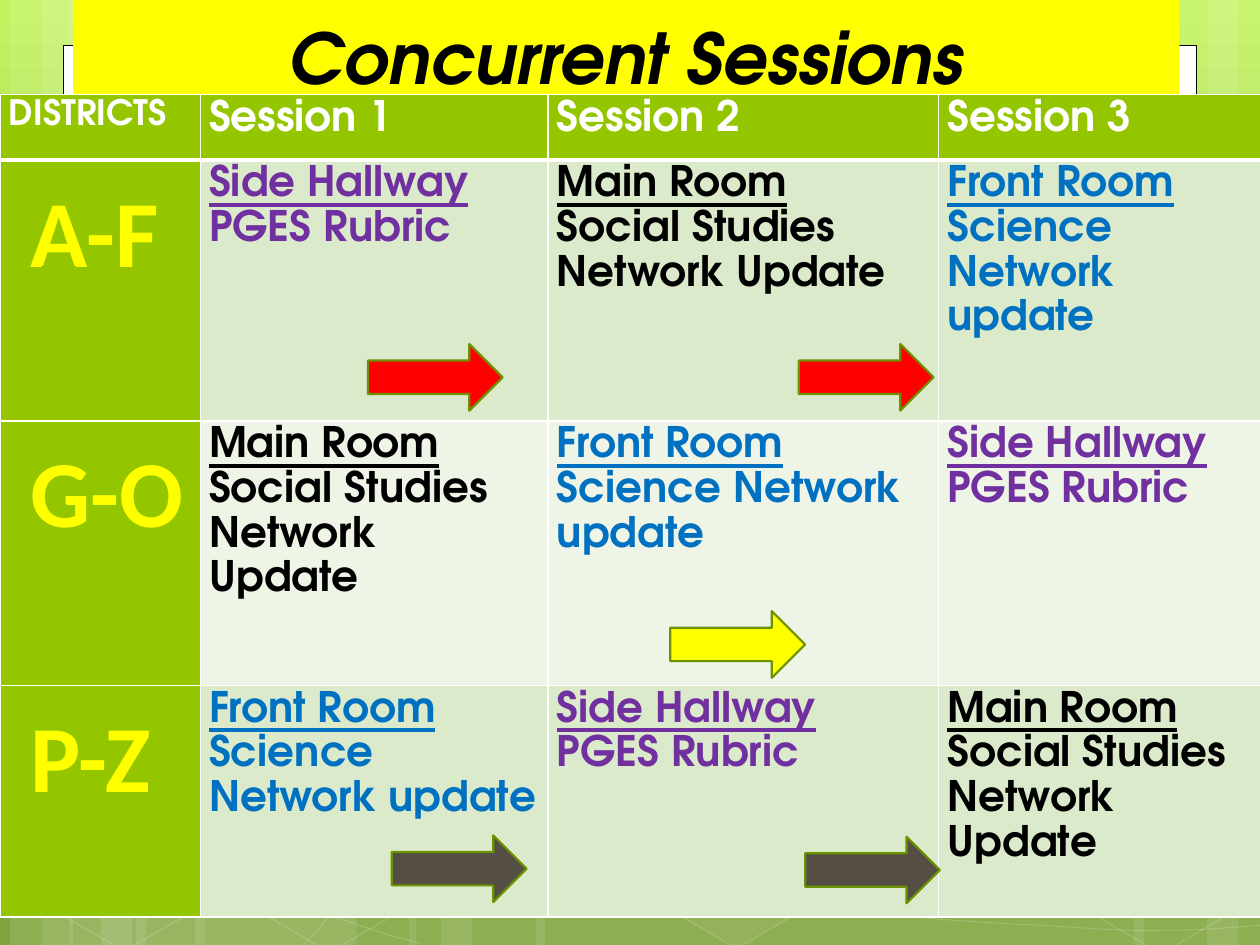
from lxml import etree
from pptx import Presentation
from pptx.dml.color import RGBColor
from pptx.enum.shapes import MSO_SHAPE
from pptx.enum.text import MSO_ANCHOR, PP_ALIGN
from pptx.oxml.ns import qn
from pptx.util import Inches, Pt

RECT, HEX, ARROW = MSO_SHAPE.RECTANGLE, MSO_SHAPE.HEXAGON, MSO_SHAPE.RIGHT_ARROW
BOTTOM, CENTER = MSO_ANCHOR.BOTTOM, PP_ALIGN.CENTER

# The slide is a grid of 100 columns by 75 rows.
COLS, ROWS = 100, 75
UNIT = Inches(0.1)
FONT, SIDE_FONT = "TeX Gyre Adventor", "Calibri"
WHITE, BLACK, GREEN, YELLOW, RED = "FFFFFF", "000000", "94C600", "FFFF00", "FF0000"
BROWN, EDGE, PALE, MIST = "554E44", "6D9200", "DCEACC", "EEF5E7"

# Left edge and width of each full-height stripe
STRIPES = [(10.8, 17.5), (0.8, 5), (3.3, 8.3), (15.5, 17.5), (5.5, 5), (8, 8.3),
           (73.3, 17.5), (95.8, 5), (90, 8.3), (42.5, 30.8), (32.5, 5), (35, 8.3)]

# Start point, then two handles and an end point for each Bezier piece
CURVES = [
    [(0.6, 61.7), (12.7, 67.2), (24.7, 72.7), (33.4, 74.9)],
    [(0.7, 57.8), (3.8, 58.9), (7, 60), (12.8, 61.6),
     (18.6, 63.1), (27.3, 65.6), (35.7, 67.3), (44, 69), (54.5, 70.8), (62.8, 71.8),
     (71.1, 72.9), (80, 73.3), (85.3, 73.6), (90.5, 74), (91.9, 73.8), (94.5, 73.8),
     (97.1, 73.7), (98.9, 73.5), (100.7, 73.4)],
    [(24.2, 74.9), (26, 72.9), (27.8, 70.9), (30.2, 69.1),
     (32.6, 67.3), (36, 65.3), (38.8, 63.9), (41.6, 62.5), (43.3, 61.9), (47, 60.9),
     (50.6, 59.9), (57.3, 58.5), (60.8, 57.8), (64.4, 57.1), (64.9, 57.1), (68, 56.9),
     (71.1, 56.6), (76, 56.3), (79.4, 56.2), (82.9, 56.1), (88.6, 56.2), (88.6, 56.2)],
]

# Left, top and fill opacity of the hexagons
HEXES = [(49.7, 58.9, 6), (1.1, 59.1, 0), (17.4, 59.2, 0), (83.4, 59.3, 0)]

WIDTHS = [15.9, 27.6, 31, 27.4]
HEIGHTS = [5.2, 20.7, 21, 18.4]
HEADS = ["DISTRICTS", "Session 1", "Session 2", "Session 3"]
RUBRIC = ("Side Hallway", "PGES Rubric", "7030A0")
SOCIAL = ("Main Room", "Social Studies Network Update", BLACK)
SCIENCE = ("Front Room", "Science Network update", "0070C0")
PLAN = [("A-F", PALE, [RUBRIC, SOCIAL, SCIENCE]),
        ("G-O", MIST, [SOCIAL, SCIENCE, RUBRIC]),
        ("P-Z", PALE, [SCIENCE, RUBRIC, SOCIAL])]
# Cell margins in grid units; the wide one keeps text on the slide
SLIM, WIDE = 0.7, 2.2

# Left and top within the schedule, and colour
ARROWS = [(29.2, 19.8, RED), (63.4, 19.8, RED), (53.2, 41, YELLOW),
          (31.1, 58.8, BROWN), (63.9, 58.9, BROWN)]


def grid(*vals):
    return [round(v * UNIT) for v in vals]


def rgb(code):
    return RGBColor.from_string(code)


def fade(shape, route, share):
    """Set the opacity, in percent, of the colour found at the route."""
    for tint in shape._element.spPr.xpath(route + "/a:srgbClr"):
        etree.SubElement(tint, qn("a:alpha")).set("val", str(share * 1000))


def paint(shape, fill=None, line=None, width=1):
    shape.shadow.inherit = False
    if fill:
        shape.fill.solid()
        shape.fill.fore_color.rgb = rgb(fill)
    else:
        shape.fill.background()
    if line:
        shape.line.color.rgb = rgb(line)
        shape.line.width = Pt(width)
    else:
        shape.line.fill.background()


def add(slide, kind, box, *look):
    shape = slide.shapes.add_shape(kind, *grid(*box))
    paint(shape, *look)
    return shape


def style(para, size, color, font=FONT, under=False, slant=False):
    for run in para.runs:
        face = run.font
        face.name, face.size, face.bold = font, Pt(size), True
        face.underline, face.italic = under, slant
        face.color.rgb = rgb(color)


def trace(points, steps=12):
    """Sample the Bezier pieces as a list of points."""
    path = [points[0]]
    for i in range(0, len(points) - 1, 3):
        piece = points[i:i + 4]
        for k in range(1, steps + 1):
            t = k / steps
            s = 1 - t
            parts = (s ** 3, 3 * s * s * t, 3 * s * t * t, t ** 3)
            path.append(tuple(sum(w * p[a] for w, p in zip(parts, piece)) for a in (0, 1)))
    return path


def backdrop(slide):
    fill = slide.background.fill
    fill.gradient()
    fill.gradient_angle = 270
    stops = slide._element.xpath(".//p:bg//a:gsLst")[0]
    for stop in list(stops):
        stops.remove(stop)
    for pos, code in [(0, "C3F35F"), (62, "93BF3F"), (100, "81A53E")]:
        stop = etree.SubElement(stops, qn("a:gs"), pos=str(pos * 1000))
        etree.SubElement(stop, qn("a:srgbClr"), val=code)

    for left, width in STRIPES:
        fade(add(slide, RECT, (left, 0, width, ROWS), WHITE), "./a:solidFill", 10)
    for points in CURVES:
        path = [grid(*point) for point in trace(points)]
        pen = slide.shapes.build_freeform(*path[0])
        pen.add_line_segments(path[1:], close=False)
        curve = pen.convert_to_shape()
        paint(curve, None, WHITE, 0.5)
        fade(curve, "./a:ln/a:solidFill", 20)
    for left, top, share in HEXES:
        tile = add(slide, HEX, (left, top, 17.5, 15.2), WHITE if share else None, WHITE)
        tile.adjustments[0] = 0.285
        tile.rotation = 30
        fade(tile, "./a:solidFill", share)
        fade(tile, "./a:ln/a:solidFill", 12)
    add(slide, RECT, (5, 3.6, COLS - 10, 67.6), WHITE, BLACK, 0.5)


def title(slide, box):
    frame = add(slide, RECT, box, YELLOW).text_frame
    frame.text = "Concurrent Sessions"
    frame.word_wrap = True
    frame.vertical_anchor = BOTTOM
    para = frame.paragraphs[0]
    para.alignment = CENTER
    style(para, 40, BLACK, slant=True)


def border(cell, base):
    props = cell._tc.get_or_add_tcPr()
    for side, width in (("L", 1), ("R", 1), ("T", 1), ("B", base)):
        line = etree.SubElement(props, qn("a:ln" + side), w=str(Pt(width)))
        fill = etree.SubElement(line, qn("a:solidFill"))
        etree.SubElement(fill, qn("a:srgbClr"), val=WHITE)


def write(cell, fill, text, base=1, gap=SLIM):
    """Fill a cell and return its paragraphs."""
    border(cell, base)
    cell.fill.solid()
    cell.fill.fore_color.rgb = rgb(fill)
    cell.margin_left, cell.margin_right = grid(SLIM, gap)
    cell.margin_top = cell.margin_bottom = 0
    cell.text_frame.text = text
    for para in cell.text_frame.paragraphs:
        para.line_spacing = 1.15
    return cell.text_frame.paragraphs


def schedule(slide, left, top):
    box = grid(left, top, sum(WIDTHS), sum(HEIGHTS))
    table = slide.shapes.add_table(len(HEIGHTS), len(WIDTHS), *box).table
    for col, width in zip(table.columns, grid(*WIDTHS)):
        col.width = width
    for row, height in zip(table.rows, grid(*HEIGHTS)):
        row.height = height

    last = len(WIDTHS) - 1
    for c, head in enumerate(HEADS):
        style(write(table.cell(0, c), GREEN, head, 3)[0], 24 if c else 20, WHITE)
    for r, (group, fill, talks) in enumerate(PLAN, 1):
        style(write(table.cell(r, 0), GREEN, " " + group)[0], 54, YELLOW, SIDE_FONT)
        for c, talk in enumerate(talks, 1):
            room, topic, color = talk
            gap = WIDE if c == last or talk is SOCIAL else SLIM
            first, second = write(table.cell(r, c), fill, room + "\n" + topic, gap=gap)
            style(first, 24, color, under=True)
            style(second, 24, color)

    for x, y, color in ARROWS:
        add(slide, ARROW, (left + x, top + y, 10.7, 5.3), color, EDGE, 1.25)


def main():
    deck = Presentation()
    deck.slide_width, deck.slide_height = grid(COLS, ROWS)
    slide = deck.slides.add_slide(deck.slide_layouts[6])
    backdrop(slide)
    title(slide, (5.8, 0, 87.8, 8.3))
    schedule(slide, 0, 7.5)
    deck.save("out.pptx")


if __name__ == "__main__":
    main()
